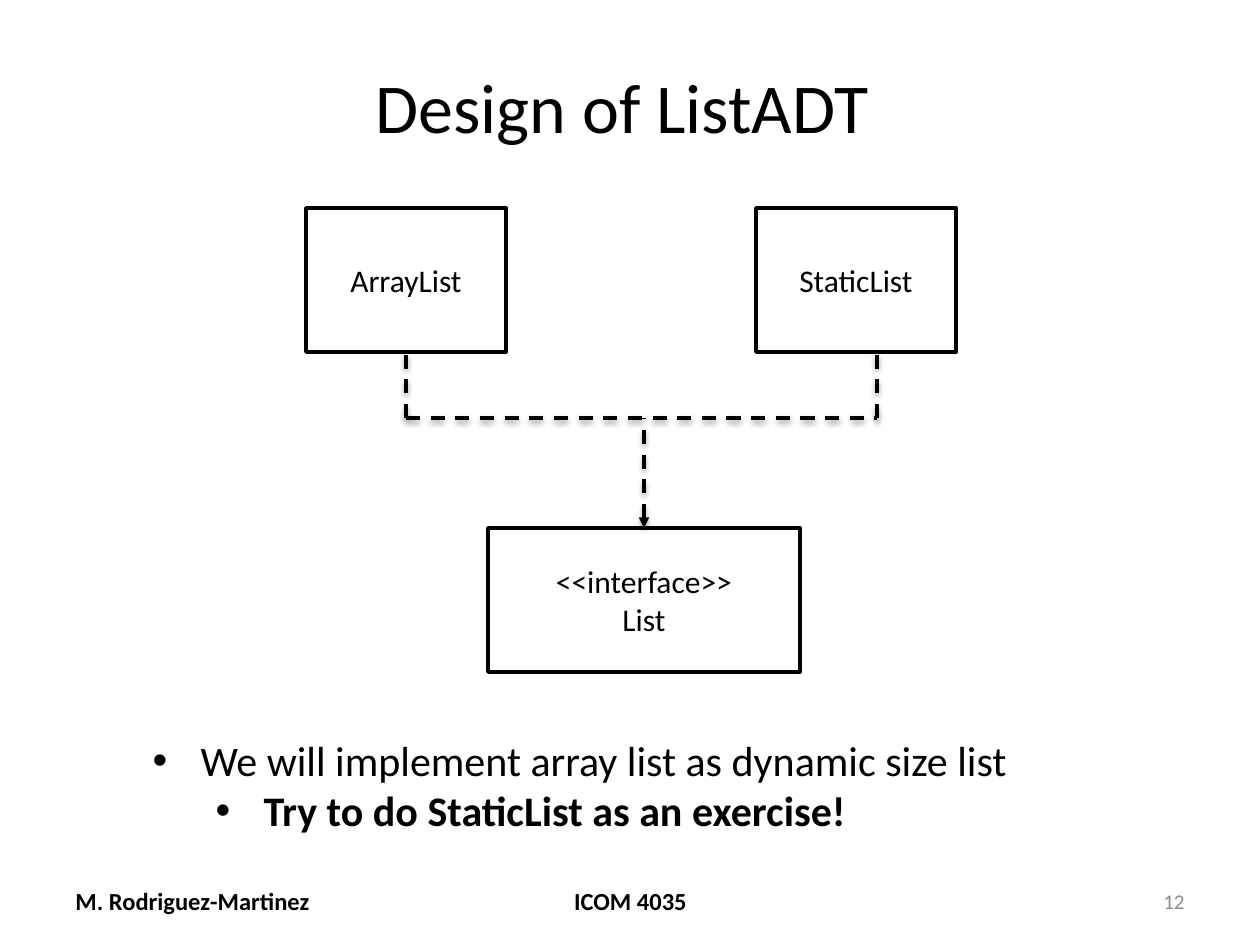
from dataclasses import dataclass

import pptx
import pptx.dml.color
import pptx.enum.dml
import pptx.enum.shapes
import pptx.enum.text
import pptx.oxml
import pptx.oxml.ns
import pptx.util
from lxml import etree

PX = 914400 / 126
ALIGN = pptx.enum.text.PP_ALIGN
ANCHOR = pptx.enum.text.MSO_ANCHOR
TOP, BOTTOM = 0, 2


@dataclass(frozen=True)
class Theme:
    font: str = "Calibri"
    ink: str = "000000"
    paper: str = "FFFFFF"
    muted: str = "8C8C8C"
    title: int = 40
    body: int = 24
    label: int = 18
    footer: int = 14
    number: int = 12
    stroke: int = 2


@dataclass(frozen=True)
class Area:
    left: int
    top: int
    width: int
    height: int

    @property
    def center(self) -> int:
        return self.left + self.width // 2

    @property
    def bottom(self) -> int:
        return self.top + self.height

    def emu(self) -> list[int]:
        return [px(v) for v in (self.left, self.top, self.width, self.height)]


@dataclass(frozen=True)
class ClassBox:
    area: Area
    label: str


@dataclass(frozen=True)
class Footer:
    area: Area
    text: str
    align: ALIGN
    size: int
    color: str
    bold: bool


@dataclass(frozen=True)
class Bullet:
    text: str
    level: int
    indent: int
    bold: bool


THEME = Theme()
TITLE = Area(63, 38, 1134, 135)
BODY = Area(140, 728, 891, 115)
HANGING = 48

ARRAY_LIST = ClassBox(Area(306, 208, 200, 144), "ArrayList")
STATIC_LIST = ClassBox(Area(756, 208, 200, 144), "StaticList")
INTERFACE = ClassBox(Area(488, 528, 312, 144), "<<interface>>\nList")
BUS_Y = 418
STATIC_DROP_X = 877

BULLETS = [
    Bullet("We will implement array list as dynamic size list", 0, 48, False),
    Bullet("Try to do StaticList as an exercise!", 1, 111, True),
]
FOOTERS = [
    Footer(Area(63, 876, 294, 50), "M. Rodriguez-Martinez", ALIGN.LEFT, THEME.footer, THEME.ink, True),
    Footer(Area(431, 876, 399, 50), "ICOM 4035", ALIGN.CENTER, THEME.footer, THEME.ink, True),
    Footer(Area(903, 876, 294, 50), "12", ALIGN.RIGHT, THEME.number, THEME.muted, False),
]


def px(value: int) -> int:
    return round(value * PX)


def rgb(color: str) -> pptx.dml.color.RGBColor:
    return pptx.dml.color.RGBColor.from_string(color)


def write(para, text: str, *, size: int, color: str = THEME.ink,
          bold: bool = False, align: ALIGN = ALIGN.LEFT) -> None:
    para.alignment = align
    span = para.add_run()
    span.text = text
    span.font.name = THEME.font
    span.font.size = pptx.util.Pt(size)
    span.font.bold = bold
    span.font.color.rgb = rgb(color)


def place(shape, area: Area) -> None:
    shape.left, shape.top, shape.width, shape.height = area.emu()


def next_para(frame, index: int):
    return frame.paragraphs[0] if index == 0 else frame.add_paragraph()


def fill_title(shape) -> None:
    place(shape, TITLE)
    shape.text_frame.vertical_anchor = ANCHOR.MIDDLE
    write(shape.text_frame.paragraphs[0], "Design of ListADT ",
          size=THEME.title, align=ALIGN.CENTER)


def fill_body(shape) -> None:
    place(shape, BODY)
    frame = shape.text_frame
    frame.word_wrap = False
    frame.auto_size = pptx.enum.text.MSO_AUTO_SIZE.SHAPE_TO_FIT_TEXT
    for index, bullet in enumerate(BULLETS):
        para = next_para(frame, index)
        para.level = bullet.level
        para.space_before = pptx.util.Pt(0)
        write(para, bullet.text, size=THEME.body, bold=bullet.bold)
        props = para._p.get_or_add_pPr()
        props.set("marL", str(px(bullet.indent)))
        props.set("indent", str(-px(HANGING)))
        font = etree.SubElement(props, pptx.oxml.ns.qn("a:buFont"))
        font.set("typeface", "Arial")
        mark = etree.SubElement(props, pptx.oxml.ns.qn("a:buChar"))
        mark.set("char", "•")


def add_footer(page, footer: Footer) -> None:
    frame = page.shapes.add_textbox(*footer.area.emu()).text_frame
    frame.word_wrap = True
    frame.vertical_anchor = ANCHOR.MIDDLE
    write(frame.paragraphs[0], footer.text, size=footer.size,
          color=footer.color, bold=footer.bold, align=footer.align)


def add_class_box(page, item: ClassBox):
    box = page.shapes.add_shape(
        pptx.enum.shapes.MSO_SHAPE.RECTANGLE, *item.area.emu())
    box.shadow.inherit = False
    box.fill.solid()
    box.fill.fore_color.rgb = rgb(THEME.paper)
    box.line.color.rgb = rgb(THEME.ink)
    box.line.width = pptx.util.Pt(THEME.stroke)
    box.text_frame.vertical_anchor = ANCHOR.MIDDLE
    for index, text in enumerate(item.label.split("\n")):
        write(next_para(box.text_frame, index), text,
              size=THEME.label, align=ALIGN.CENTER)
    return box


def add_dashed_line(page, start: tuple[int, int], end: tuple[int, int], *,
                    arrow_at_start: bool = False):
    line = page.shapes.add_connector(
        pptx.enum.shapes.MSO_CONNECTOR.STRAIGHT, *map(px, start + end))
    line.line.color.rgb = rgb(THEME.ink)
    line.line.width = pptx.util.Pt(THEME.stroke)
    line.line.dash_style = pptx.enum.dml.MSO_LINE.DASH
    if arrow_at_start:
        head = etree.SubElement(line.line._get_or_add_ln(), pptx.oxml.ns.qn("a:headEnd"))
        head.set("type", "triangle")
    line._element.spPr.append(pptx.oxml.parse_xml(
        f'<a:effectLst {pptx.oxml.ns.nsdecls("a")}>'
        '<a:outerShdw blurRad="40000" dist="20000" dir="5400000" rotWithShape="0">'
        f'<a:srgbClr val="{THEME.ink}"><a:alpha val="38000"/></a:srgbClr>'
        '</a:outerShdw></a:effectLst>'))
    return line


def add_diagram(page) -> None:
    array_box, _, interface_box = [
        add_class_box(page, item) for item in (ARRAY_LIST, STATIC_LIST, INTERFACE)]
    array_x, interface_x = ARRAY_LIST.area.center, INTERFACE.area.center
    add_dashed_line(page, (array_x, BUS_Y), (STATIC_DROP_X, BUS_Y))
    array_drop = add_dashed_line(page, (array_x, BUS_Y), (array_x, ARRAY_LIST.area.bottom))
    array_drop.end_connect(array_box, BOTTOM)
    add_dashed_line(page, (STATIC_DROP_X, BUS_Y), (STATIC_DROP_X, STATIC_LIST.area.bottom))
    arrow = add_dashed_line(page, (interface_x, INTERFACE.area.top),
                            (interface_x, BUS_Y), arrow_at_start=True)
    arrow.begin_connect(interface_box, TOP)


def main() -> None:
    deck = pptx.Presentation()
    deck.slide_width, deck.slide_height = pptx.util.Inches(10), pptx.util.Inches(7.5)
    page = deck.slides.add_slide(deck.slide_layouts[1])
    fill_title(page.shapes.title)
    fill_body(page.placeholders[1])
    for footer in FOOTERS:
        add_footer(page, footer)
    add_diagram(page)
    deck.save("out.pptx")


if __name__ == "__main__":
    main()
